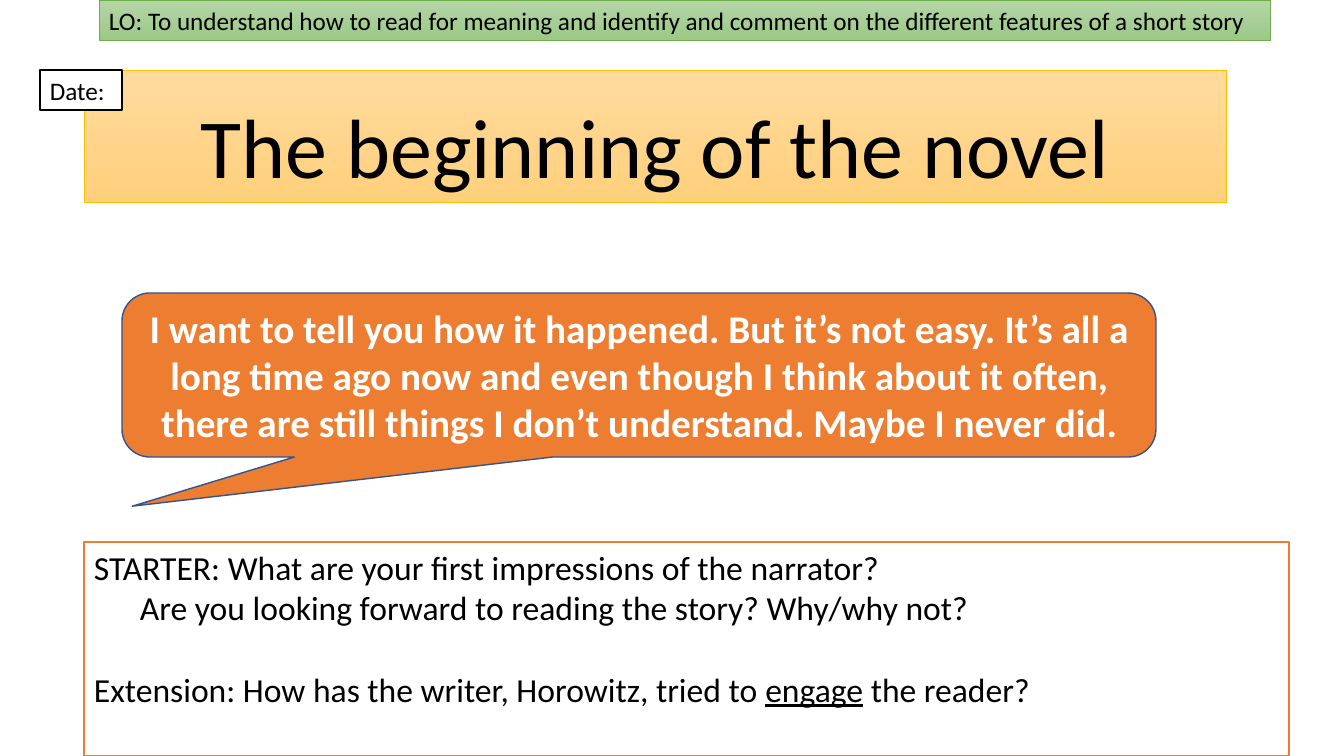
"""Build a lesson-starter slide about the beginning of a novel."""
from pptx import Presentation
from pptx.dml.color import RGBColor
from pptx.enum.shapes import MSO_SHAPE
from pptx.enum.text import MSO_ANCHOR, PP_ALIGN
from pptx.util import Pt

RECT, CALLOUT = MSO_SHAPE.RECTANGLE, MSO_SHAPE.ROUNDED_RECTANGULAR_CALLOUT
TOP, MIDDLE, BOTTOM = MSO_ANCHOR.TOP, MSO_ANCHOR.MIDDLE, MSO_ANCHOR.BOTTOM
LEFT, CENTER = PP_ALIGN.LEFT, PP_ALIGN.CENTER

THEME = {
    "font": "Calibri",
    "title": {"fill": ("FFDB9E", "FFD07C"), "line": "FFC000", "width": 0.5, "ink": "000000", "size": 60},
    "date": {"fill": ("FFFFFF",), "line": "000000", "width": 1, "ink": "000000", "size": 18},
    "starter": {"fill": ("FFFFFF",), "line": "ED7D31", "width": 1, "ink": "000000", "size": 24},
    "quote": {"fill": ("ED7D31",), "line": "325491", "width": 1, "ink": "FFFFFF", "size": 28},
    "objective": {"fill": ("B5D5A7", "9CC987"), "line": "70AD47", "width": 0.5, "ink": "000000", "size": 18},
}

TITLE = ["The beginning of the novel"]
DATE = ["Date:"]
STARTER = [
    "STARTER: What are your first impressions of the narrator?",
    "Are you looking forward to reading the story? Why/why not?",
    ("Extension: How has the writer, Horowitz, tried to ", "engage", " the reader?"),
]
QUOTE = [
    "I want to tell you how it happened. But it’s not easy. It’s all a long time ago now "
    "and even though I think about it often, there are still things I don’t understand. "
    "Maybe I never did."
]
OBJECTIVE = [
    "LO: To understand how to read for meaning and identify and comment on "
    "the different features of a short story"
]

PANELS = [
    ("title", TITLE, RECT, (84, 70, 1142, 132), BOTTOM, CENTER),
    ("date", DATE, RECT, (40, 70, 82, 40), TOP, LEFT),
    ("starter", STARTER, RECT, (84, 542, 1205, 214), TOP, LEFT),
    ("quote", QUOTE, CALLOUT, (122, 293, 1034, 164), MIDDLE, CENTER),
    ("objective", OBJECTIVE, RECT, (99, 0, 1171, 40), TOP, LEFT),
]
SLIDE_SIZE = (1344, 756)
QUOTE_TAIL = (-0.49, 0.8, 0.17)
QUESTION_INDENT = 46
EXTENSION_GAP = 41


def px(length):
    return round(length * 914400 / 100.8)


def color(code):
    return RGBColor.from_string(code)


def paint(panel, style):
    panel.shadow.inherit = False
    shades = style["fill"]
    if len(shades) == 1:
        panel.fill.solid()
        panel.fill.fore_color.rgb = color(shades[0])
    else:
        panel.fill.gradient()
        panel.fill.gradient_angle = 270
        for stop, shade in zip(panel.fill.gradient_stops, shades):
            stop.color.rgb = color(shade)
    panel.line.color.rgb = color(style["line"])
    panel.line.width = Pt(style["width"])


def write(frame, lines, style, anchor, align):
    frame.word_wrap = True
    frame.vertical_anchor = anchor
    for number, line in enumerate(lines):
        paragraph = frame.add_paragraph() if number else frame.paragraphs[0]
        paragraph.alignment = align
        for part in (line,) if isinstance(line, str) else line:
            run = paragraph.add_run()
            run.text = part
            run.font.name = THEME["font"]
            run.font.size = Pt(style["size"])
            run.font.color.rgb = color(style["ink"])


def main():
    deck = Presentation()
    deck.slide_width, deck.slide_height = map(px, SLIDE_SIZE)
    slide = deck.slides.add_slide(deck.slide_layouts[6])
    panels = {}
    for role, lines, outline, place, anchor, align in PANELS:
        panel = slide.shapes.add_shape(outline, *map(px, place))
        paint(panel, THEME[role])
        write(panel.text_frame, lines, THEME[role], anchor, align)
        panels[role] = panel

    panels["title"].text_frame.paragraphs[0].line_spacing = 0.9
    quote = panels["quote"]
    for position, value in enumerate(QUOTE_TAIL):
        quote.adjustments[position] = value
    quote.text_frame.paragraphs[0].runs[0].font.bold = True

    _, question, extension = panels["starter"].text_frame.paragraphs
    question._p.get_or_add_pPr().set("marL", str(px(QUESTION_INDENT)))
    extension.space_before = px(EXTENSION_GAP)
    extension.runs[1].font.underline = True
    deck.save("out.pptx")


if __name__ == "__main__":
    main()
